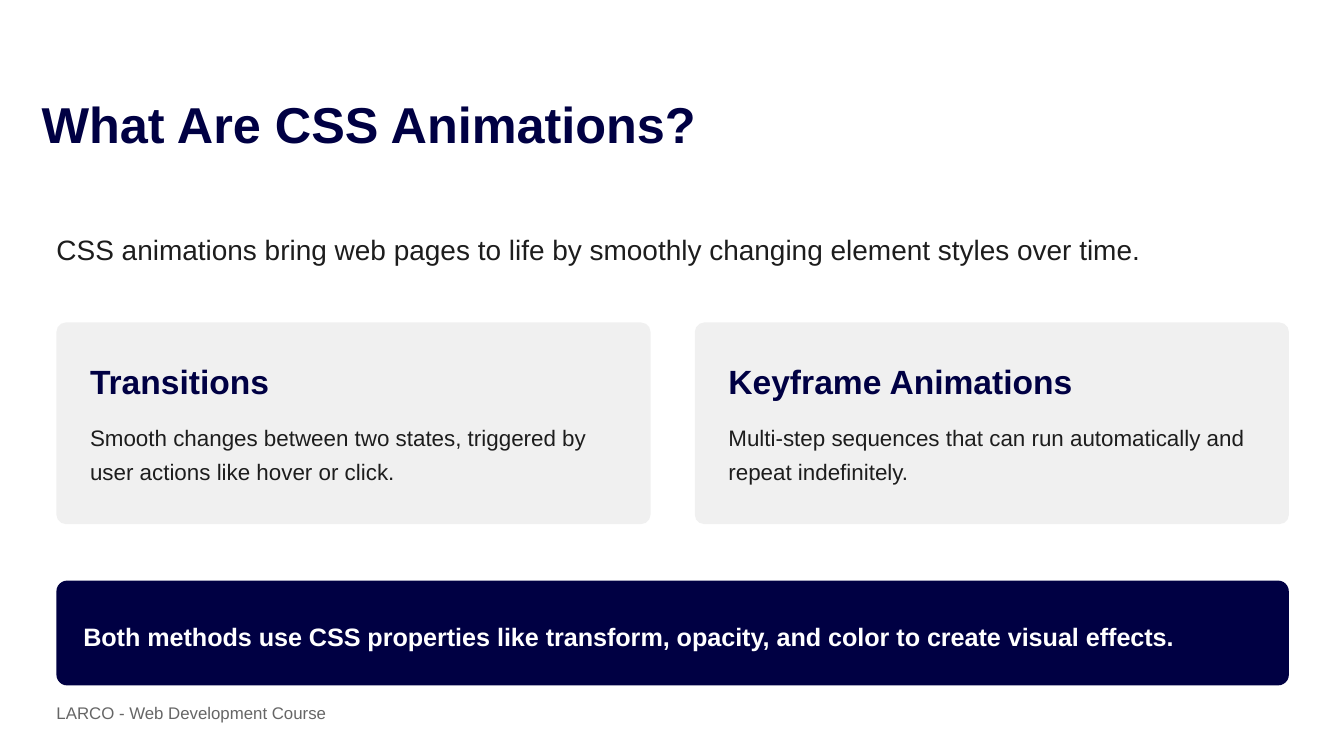
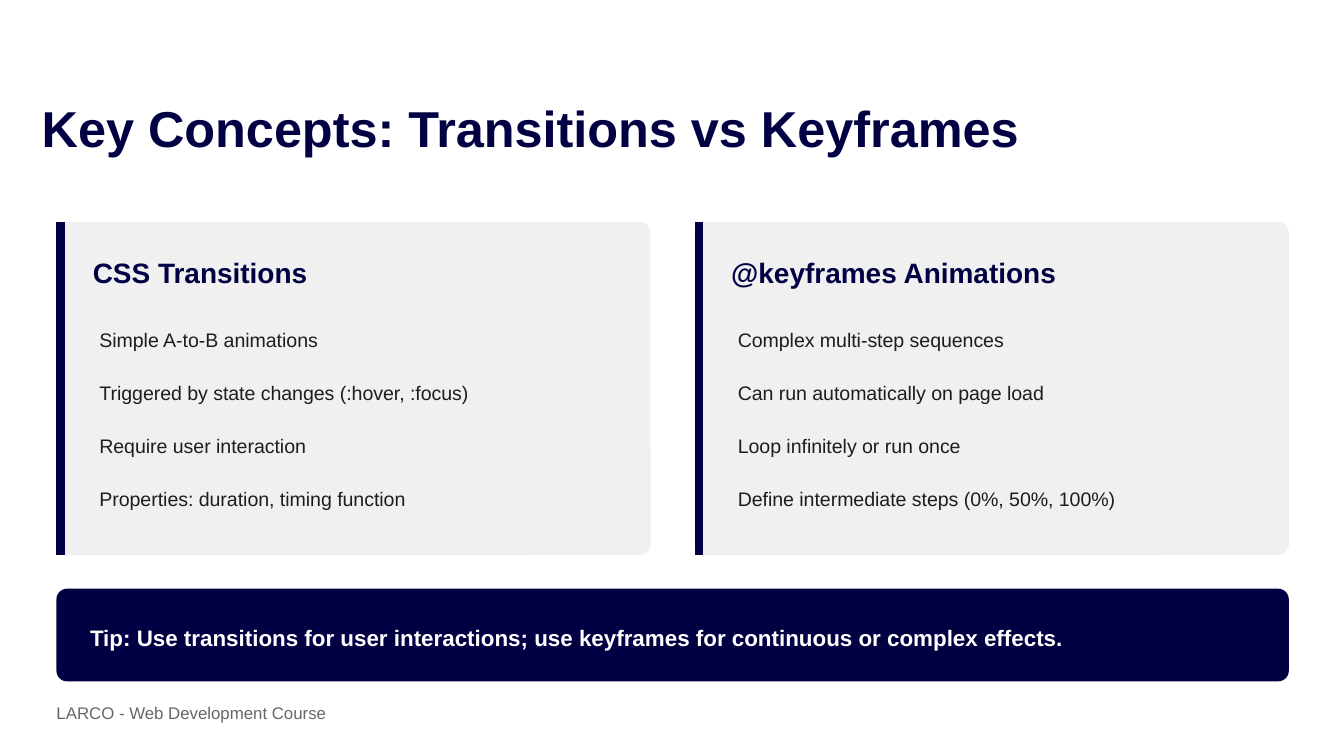
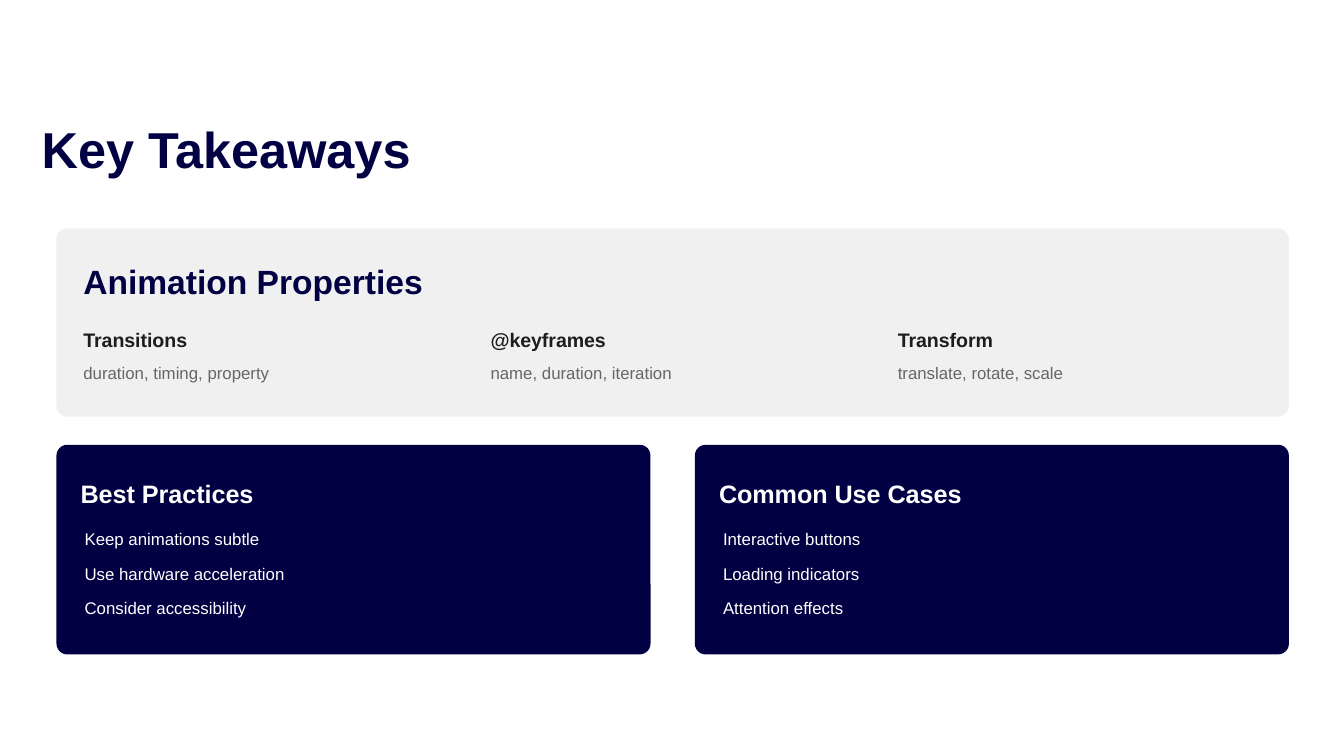
from dataclasses import dataclass

from lxml import etree
from pptx import Presentation
from pptx import util as u
from pptx.dml.color import RGBColor
from pptx.enum import shapes, text
from pptx.oxml.ns import qn


@dataclass(frozen=True)
class TextStyle:
    size: float
    color: str
    line: float
    bold: bool = False
    before: float = 0
    after: float = 0


class Theme:
    # Colours
    font = "Arial"
    navy = "000043"
    panel = "F0F0F0"
    ink = "1D1D1D"
    grey = "666666"
    white = "FFFFFF"

    # Type styles
    title = TextStyle(27, navy, 30, bold=True)
    lead = TextStyle(15, ink, 22.5, before=3, after=18)
    heading = TextStyle(18, navy, 24, bold=True, after=9)
    body = TextStyle(12, ink, 18, before=3, after=3)
    concept = TextStyle(15, navy, 21, bold=True, after=12)
    concept_item = TextStyle(10.5, ink, 21, after=7.5)
    banner = TextStyle(13.5, white, 20.2, bold=True, before=3, after=3)
    tip = TextStyle(12, white, 16.8, bold=True, before=3, after=3)
    property_name = TextStyle(10.5, ink, 15, bold=True, before=3, after=4.5)
    small = TextStyle(9, grey, 12, before=3, after=3)
    advice = TextStyle(13.5, white, 21, bold=True, after=7.5)
    advice_item = TextStyle(9, white, 14, after=4.5)

    # Shared grid, in inches
    left = 0.42
    full_width = 9.17
    column_width = 4.42
    column_step = 4.75
    radius = 0.08
    footer = "LARCO - Web Development Course"


class Deck:
    def __init__(self, theme):
        self.theme = theme
        self.presentation = Presentation()
        self.presentation.slide_width = u.Inches(10)
        self.presentation.slide_height = u.Inches(10) * 9 // 16
        self.slide = None

    def new_slide(self, title, top, width):
        layout = self.presentation.slide_layouts.get_by_name("Title Only")
        self.slide = self.presentation.slides.add_slide(layout)
        shape = self.slide.shapes.title
        shape.left, shape.top = u.Inches(0.31), u.Inches(top)
        shape.width, shape.height = u.Inches(width), u.Inches(0.42)
        self.fill_text(shape, [title], self.theme.title)

    def fill_text(self, shape, lines, style, indent=0):
        frame = shape.text_frame
        frame.word_wrap = True
        frame.auto_size = text.MSO_AUTO_SIZE.NONE
        frame.vertical_anchor = text.MSO_ANCHOR.TOP
        frame.margin_left = u.Inches(indent)
        frame.margin_top = frame.margin_right = frame.margin_bottom = 0
        frame.text = "\n".join(lines)
        for paragraph in frame.paragraphs:
            paragraph.alignment = text.PP_ALIGN.LEFT
            paragraph.line_spacing = u.Pt(style.line)
            paragraph.space_before = u.Pt(style.before)
            paragraph.space_after = u.Pt(style.after)
            paragraph.font.name = self.theme.font
            paragraph.font.size = u.Pt(style.size)
            paragraph.font.bold = style.bold
            paragraph.font.color.rgb = RGBColor.from_string(style.color)

    def text(self, left, top, width, height, lines, style, indent=0):
        box = self.slide.shapes.add_textbox(
            u.Inches(left), u.Inches(top), u.Inches(width), u.Inches(height))
        self.fill_text(box, lines, style, indent)

    def card(self, left, top, width, height, color, radius=Theme.radius):
        shape = self.slide.shapes.add_shape(
            shapes.MSO_SHAPE.ROUNDED_RECTANGLE,
            u.Inches(left), u.Inches(top), u.Inches(width), u.Inches(height))
        shape.adjustments[0] = radius / min(width, height)
        shape.shadow.inherit = False
        shape.fill.solid()
        shape.fill.fore_color.rgb = RGBColor.from_string(color)
        shape.line.fill.background()

    def accent(self, x, top, height):
        line = self.slide.shapes.add_connector(
            shapes.MSO_CONNECTOR.STRAIGHT,
            u.Inches(x), u.Inches(top), u.Inches(x), u.Inches(top + height))
        line.line.color.rgb = RGBColor.from_string(self.theme.navy)
        line.line.width = u.Pt(4.5)
        etree.SubElement(line._element.spPr, qn("a:effectLst"))

    def columns(self, contents):
        for index, (heading, content) in enumerate(contents):
            yield self.theme.left + index * self.theme.column_step, heading, content

    def footer(self):
        self.text(self.theme.left, 5.21, 2.05, 0.17,
                  [self.theme.footer], self.theme.small)


def add_introduction(deck):
    theme = deck.theme
    deck.new_slide("What Are CSS Animations?", 0.73, 4.97)
    deck.text(theme.left, 1.67, 9.35, 0.31,
              ["CSS animations bring web pages to life by smoothly changing "
               "element styles over time."], theme.lead)

    # Two kinds of animation
    methods = [
        ("Transitions", "Smooth changes between two states, triggered by "
                        "user actions like hover or click."),
        ("Keyframe Animations", "Multi-step sequences that can run "
                                "automatically and repeat indefinitely."),
    ]
    for left, heading, description in deck.columns(methods):
        deck.card(left, 2.4, theme.column_width, 1.5, theme.panel, radius=0.07)
        deck.text(left + 0.25, 2.65, 4, 0.33, [heading], theme.heading)
        deck.text(left + 0.25, 3.11, 4, 0.5, [description], theme.body)

    # Summary banner
    deck.card(theme.left, 4.32, theme.full_width, 0.78, theme.navy)
    deck.text(0.62, 4.57, 8.93, 0.28,
              ["Both methods use CSS properties like transform, opacity, and "
               "color to create visual effects."], theme.banner)
    deck.footer()


def add_concepts(deck):
    theme = deck.theme
    deck.new_slide("Key Concepts: Transitions vs Keyframes", 0.76, 7.43)

    # Side-by-side comparison
    concepts = [
        ("CSS Transitions", [
            "Simple A-to-B animations",
            "Triggered by state changes (:hover, :focus)",
            "Require user interaction",
            "Properties: duration, timing function"]),
        ("@keyframes Animations", [
            "Complex multi-step sequences",
            "Can run automatically on page load",
            "Loop infinitely or run once",
            "Define intermediate steps (0%, 50%, 100%)"]),
    ]
    for left, heading, items in deck.columns(concepts):
        deck.card(left, 1.65, theme.column_width, 2.48, theme.panel)
        deck.accent(left + 0.03, 1.65, 2.48)
        deck.text(left + 0.27, 1.86, 4.02, 0.29, [heading], theme.concept)
        deck.text(left + 0.27, 2.32, 3.94, 1.6, items,
                  theme.concept_item, indent=0.05)

    # Tip banner
    deck.card(theme.left, 4.38, theme.full_width, 0.69, theme.navy)
    deck.text(0.67, 4.61, 8.84, 0.23,
              ["Tip: Use transitions for user interactions; use keyframes for "
               "continuous or complex effects."], theme.tip)
    deck.footer()


def add_takeaways(deck):
    theme = deck.theme
    deck.new_slide("Key Takeaways", 0.91, 4.79)

    # Properties panel
    deck.card(theme.left, 1.7, theme.full_width, 1.4, theme.panel)
    deck.text(0.62, 1.91, 8.93, 0.33, ["Animation Properties"], theme.heading)
    properties = [
        ("Transitions", "duration, timing, property"),
        ("@keyframes", "name, duration, iteration"),
        ("Transform", "translate, rotate, scale"),
    ]
    for index, (name, values) in enumerate(properties):
        left = 0.62 + index * 3.03
        deck.text(left, 2.41, 2.75, 0.21, [name], theme.property_name)
        deck.text(left, 2.68, 2.75, 0.17, [values], theme.small)

    # Advice cards
    advice = [
        ("Best Practices", [
            "Keep animations subtle",
            "Use hardware acceleration",
            "Consider accessibility"]),
        ("Common Use Cases", [
            "Interactive buttons",
            "Loading indicators",
            "Attention effects"]),
    ]
    for left, heading, items in deck.columns(advice):
        deck.card(left, 3.31, theme.column_width, 1.56, theme.navy)
        deck.text(left + 0.18, 3.49, 4.12, 0.29, [heading], theme.advice)
        deck.text(left + 0.18, 3.89, 4.04, 0.79, items,
                  theme.advice_item, indent=0.03)


def main():
    deck = Deck(Theme())
    add_introduction(deck)
    add_concepts(deck)
    add_takeaways(deck)
    deck.presentation.save("out.pptx")


if __name__ == "__main__":
    main()
